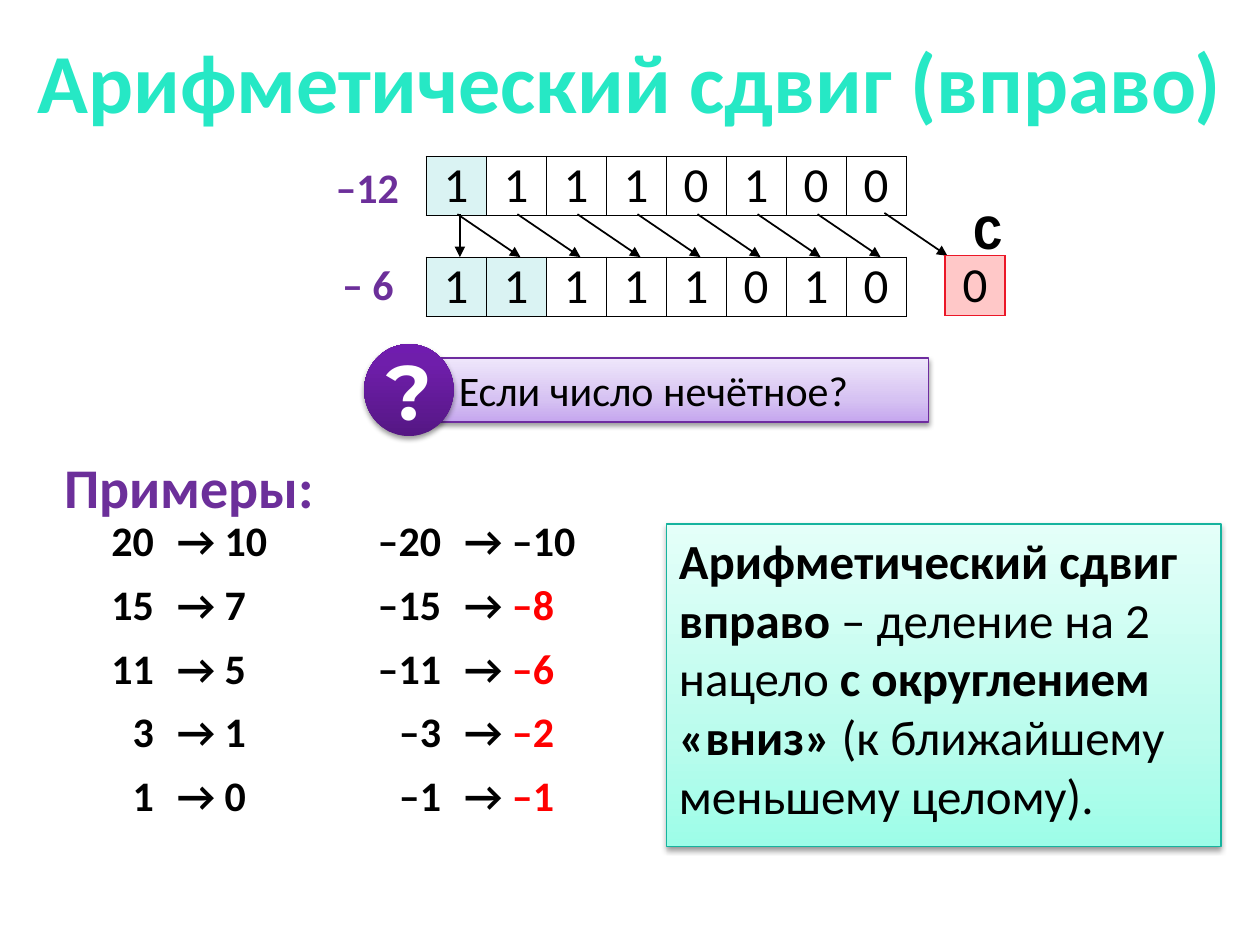
from lxml.etree import SubElement
from pptx import Presentation
from pptx.dml.color import RGBColor
from pptx.enum.shapes import MSO_CONNECTOR, MSO_SHAPE
from pptx.enum.text import MSO_ANCHOR, PP_ALIGN
from pptx.oxml.ns import qn
from pptx.util import Pt

COLORS = {
    "title": "26E8C5", "purple": "6C2F9A", "black": "000000", "white": "FFFFFF",
    "red": "FF0000", "sign": "DAF3F3", "carry": "FFC8C8", "carry_line": "EB1727",
    "question_line": "6E2C9F", "rule_line": "16B39E",
}
GRADIENTS = {  # from bottom to top
    "question": [(0, "C5A6EE"), (35, "D6C2F2"), (100, "EFE7FB")],
    "badge": [(0, "551784"), (80, "6F1EAB"), (100, "701CAF")],
    "rule": [(0, "9DFDE8"), (35, "BBFCED"), (100, "E4FFF9")],
}
TITLE = "Арифметический сдвиг (вправо)"
# label, label box, bits, number of sign bits, top of the register
REGISTERS = [
    ("–12", (184.3, 88.6, 51.1, 36), "11110100", 1, 89.3),
    ("– 6", (187.9, 144, 44.6, 36), "11111010", 2, 146.9),
]
# number, result, result colour
POSITIVE = [("20", "10", "black"), ("15", "7", "black"), ("11", "5", "black"),
            ("3", "1", "black"), ("1", "0", "black")]
NEGATIVE = [("–20", "–10", "black"), ("–15", "–8", "red"), ("–11", "–6", "red"),
            ("–3", "–2", "red"), ("–1", "–1", "red")]
# rows, left and width of the numbers, width of the results
EXAMPLES = [(POSITIVE, 53.3, 41.7, 72), (NEGATIVE, 204.5, 54.7, 85.7)]
EXAMPLE_TOP, EXAMPLE_STEP = 290.6, 36.4
RULE = [("Арифметический сдвиг вправо ", True), ("– деление на 2 нацело ", False),
        ("с округлением «вниз»", True), (" (к ближайшему меньшему целому).", False)]
REGISTER_LEFT, CELL = 243.4, 34.3
ARROW_LEFT, ARROW_RUN = 261.4, 36


def rgb(name):
    return RGBColor.from_string(COLORS[name])


def points(*lengths):
    return [Pt(length) for length in lengths]


def add_run(paragraph, text, size, color="black", bold=True, font="Calibri"):
    run = paragraph.add_run()
    run.text = text
    run.font.name, run.font.size, run.font.bold = font, Pt(size), bold
    run.font.color.rgb = rgb(color)


def add_text(slide, box, runs, size, align=PP_ALIGN.LEFT, wrap=False, font="Calibri"):
    """Add a bold text box; runs are (text, colour) pairs."""
    frame = slide.shapes.add_textbox(*points(*box)).text_frame
    frame.word_wrap = wrap
    paragraph = frame.paragraphs[0]
    paragraph.alignment = align
    for text, color in runs:
        add_run(paragraph, text, size, color, font=font)
    return frame


def add_panel(shapes, kind, box, gradient, line=None):
    """Add a shape with a vertical gradient and a soft shadow below."""
    shape = shapes.add_shape(kind, *points(*box))
    shape.fill.gradient()
    shape.fill.gradient_angle = 90
    properties = shape._element.spPr
    stops = properties.find(".//" + qn("a:gsLst"))
    for stop in list(stops):
        stops.remove(stop)
    for position, color in GRADIENTS[gradient]:
        stop = SubElement(stops, qn("a:gs"), pos=str(position * 1000))
        SubElement(stop, qn("a:srgbClr"), val=color)
    if line:
        shape.line.color.rgb = rgb(line)
        shape.line.width = Pt(0.75)
    else:
        shape.line.fill.background()
    shape.shadow.inherit = False
    shadow = SubElement(properties.find(qn("a:effectLst")), qn("a:outerShdw"),
                        blurRad=str(Pt(3.1)), dist=str(Pt(1.6)), dir="5400000",
                        rotWithShape="0")
    color = SubElement(shadow, qn("a:srgbClr"), val=COLORS["black"])
    SubElement(color, qn("a:alpha"), val="38000")
    shape.text_frame.word_wrap = True
    shape.text_frame.vertical_anchor = MSO_ANCHOR.TOP
    shape.text_frame.paragraphs[0].alignment = PP_ALIGN.LEFT
    return shape


def add_register(slide, left, top, bits, fills, line, width):
    frame = slide.shapes.add_table(1, len(bits), *points(left, top, CELL * len(bits), 34))
    table = frame.table
    table.first_row = table.horz_banding = False
    for index, (bit, fill) in enumerate(zip(bits, fills)):
        table.columns[index].width = Pt(CELL)
        cell = table.cell(0, index)
        cell.margin_left = cell.margin_right = Pt(5.5)
        cell.margin_top = cell.margin_bottom = 0
        cell.fill.solid()
        cell.fill.fore_color.rgb = rgb(fill)
        paragraph = cell.text_frame.paragraphs[0]
        paragraph.alignment = PP_ALIGN.CENTER
        add_run(paragraph, bit, 28, bold=False)
        properties = cell._tc.get_or_add_tcPr()
        for order, side in enumerate(("a:lnL", "a:lnR", "a:lnT", "a:lnB")):
            border = SubElement(properties, qn(side), w=str(Pt(width)))
            solid = SubElement(border, qn("a:solidFill"))
            SubElement(solid, qn("a:srgbClr"), val=COLORS[line])
            properties.insert(order, border)


def add_arrow(slide, *ends):
    arrow = slide.shapes.add_connector(MSO_CONNECTOR.STRAIGHT, *points(*ends))
    arrow.line.color.rgb = rgb("black")
    arrow.line.width = Pt(1)
    SubElement(arrow.line._get_or_add_ln(), qn("a:tailEnd"), type="triangle")
    SubElement(arrow._element.spPr, qn("a:effectLst"))


presentation = Presentation()
presentation.slide_width, presentation.slide_height = points(720, 540)
slide = presentation.slides.add_slide(presentation.slide_layouts[6])

# Title
title = add_text(slide, (0, 23.8, 720, 43.9), [(TITLE, "title")], 48, PP_ALIGN.CENTER, True)
title.vertical_anchor = MSO_ANCHOR.MIDDLE

# Registers before and after the shift
for label, box, bits, sign_bits, top in REGISTERS:
    add_text(slide, box, [(label, "purple")], 24, PP_ALIGN.CENTER)
    fills = ["sign"] * sign_bits + ["white"] * (len(bits) - sign_bits)
    add_register(slide, REGISTER_LEFT, top, bits, fills, "black", 0.5)

# Shift arrows, the kept sign bit and the carry bit
for index in range(7):
    start = ARROW_LEFT + index * CELL
    add_arrow(slide, start, 122.4, start + ARROW_RUN, 146.9)
add_arrow(slide, 262.8, 122.4, 262.8, 146.9)
add_arrow(slide, 505.4, 121.7, 505.4 + ARROW_RUN, 146.2)
add_register(slide, 540, 146.2, "0", ["carry"], "carry_line", 0.75)
add_text(slide, (548.6, 110.9, 31.7, 41), [("С", "black")], 28, PP_ALIGN.CENTER,
         font="Courier New")

# Question
group = slide.shapes.add_group_shape()
question = add_panel(group.shapes, MSO_SHAPE.RECTANGLE, (244.8, 204.5, 285.8, 36.7),
                     "question", "question_line")
question.text_frame.margin_left = Pt(17.5)
add_run(question.text_frame.paragraphs[0], "Если число нечётное?", 24, bold=False)
badge = add_panel(group.shapes, MSO_SHAPE.OVAL, (208.1, 196.6, 51.1, 52.6), "badge")
badge.text_frame.word_wrap = False
badge.text_frame.vertical_anchor = MSO_ANCHOR.MIDDLE
badge.text_frame.paragraphs[0].alignment = PP_ALIGN.CENTER
add_run(badge.text_frame.paragraphs[0], "?", 44, "white", font="Montserrat")

# Examples
add_text(slide, (29.5, 254.9, 159.1, 46), [("Примеры:", "purple")], 32)
for rows, left, width, result_width in EXAMPLES:
    for index, (number, result, color) in enumerate(rows):
        top = EXAMPLE_TOP + index * EXAMPLE_STEP
        add_text(slide, (left, top, width, 36), [(number, "black")], 24, PP_ALIGN.RIGHT)
        add_text(slide, (left + width - 0.9, top, result_width, 36),
                 [("→ ", "black"), (result, color)], 24)

# Rule
rule = add_panel(slide.shapes, MSO_SHAPE.RECTANGLE, (380.9, 299.5, 316.8, 184.3),
                 "rule", "rule_line")
for text, bold in RULE:
    add_run(rule.text_frame.paragraphs[0], text, 28, bold=bold)

presentation.save("out.pptx")
